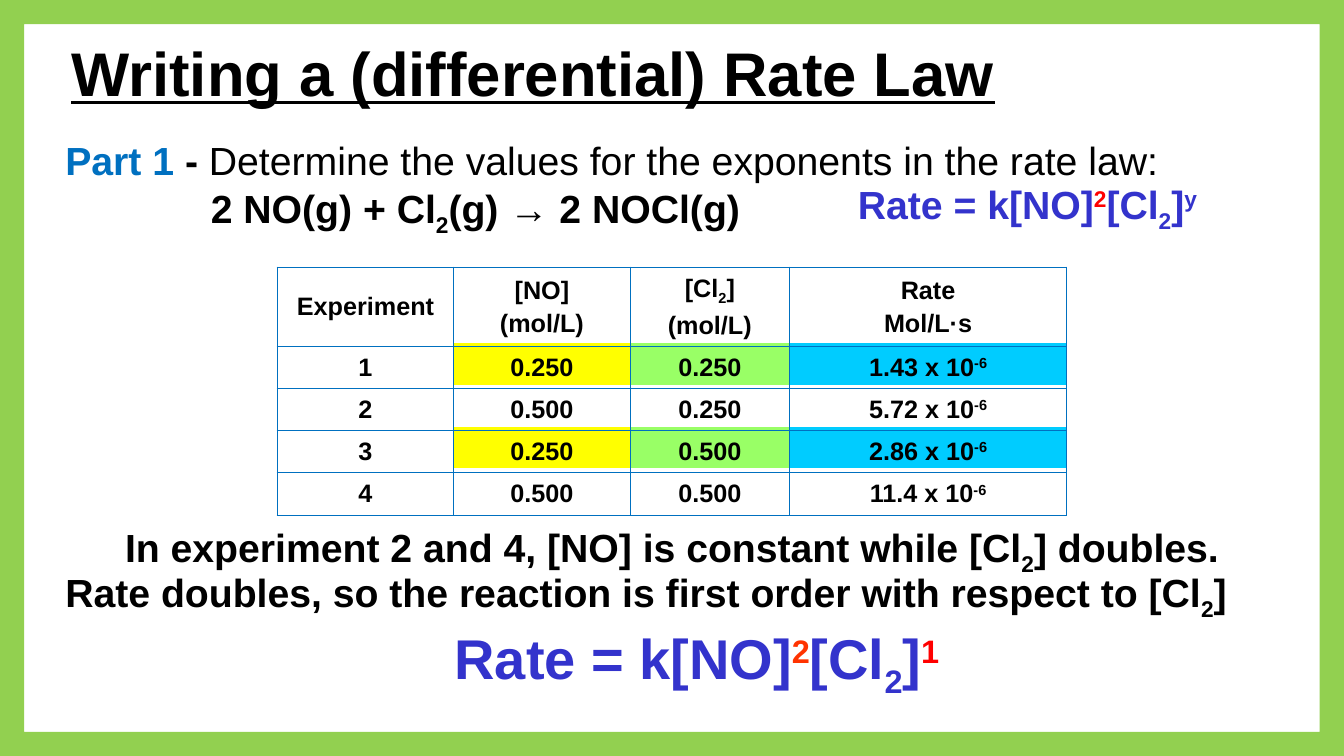
from itertools import accumulate

from lxml import etree
from pptx import Presentation
from pptx.dml.color import RGBColor
from pptx.enum.shapes import MSO_SHAPE
from pptx.enum.text import MSO_ANCHOR, MSO_AUTO_SIZE, PP_ALIGN
from pptx.oxml.ns import qn
from pptx.util import Inches, Pt

LEFT, CENTER = PP_ALIGN.LEFT, PP_ALIGN.CENTER
TOP, MIDDLE = MSO_ANCHOR.TOP, MSO_ANCHOR.MIDDLE
GROW = MSO_AUTO_SIZE.SHAPE_TO_FIT_TEXT
RECTANGLE, FRAME = MSO_SHAPE.RECTANGLE, MSO_SHAPE.FRAME

FONT = "Arial"
BLACK, WHITE = "000000", "FFFFFF"
BLUE, INDIGO = "0070C0", "3333CC"
RED, ORANGE_RED = "FF0000", "FF3300"
GREEN = "92D050"
SUB, SUPER = -25000, 30000

COLUMNS = [1.75, 1.75, 1.58, 2.75]
ROWS = [0.75, 0.41, 0.42, 0.42, 0.42]
HIGHLIGHT_COLORS = ["FFFF00", "99FF66", "00CCFF"]
HIGHLIGHT_TOPS = [0.75, 1.58]
CL2 = [("[Cl",), ("2", SUB), ("]",)]
HEADINGS = [
    [[("Experiment",)]],
    [[("[NO]",)], [("(mol/L)",)]],
    [CL2, [("(mol/L)",)]],
    [[("Rate",)], [("Mol/L·s",)]],
]
TRIALS = [
    ("1", "0.250", "0.250", "1.43"),
    ("2", "0.500", "0.250", "5.72"),
    ("3", "0.250", "0.500", "2.86"),
    ("4", "0.500", "0.500", "11.4"),
]


def rgb(hex_color):
    return RGBColor.from_string(hex_color)


def add_span(para, size, text, baseline=0, color=BLACK, bold=True, underline=False):
    span = para.add_run()
    span.text = text
    font = span.font
    font.name, font.size, font.bold = FONT, Pt(size), bold
    font.color.rgb = rgb(color)
    if underline:
        font.underline = True
    if baseline:
        span._r.get_or_add_rPr().set("baseline", str(baseline))


def add_text(page, box, size, spans, align=LEFT, anchor=TOP, wrap=True):
    """Place one paragraph of (text, baseline, color, ...) spans."""
    frame = page.shapes.add_textbox(*map(Inches, box)).text_frame
    frame.word_wrap = wrap
    frame.vertical_anchor = anchor
    if anchor == TOP:
        frame.auto_size = GROW
    para = frame.paragraphs[0]
    para.alignment = align
    for span in spans:
        add_span(para, size, *span)


def add_filled(page, kind, box, color, line=None):
    shape = page.shapes.add_shape(kind, *map(Inches, box))
    shape.shadow.inherit = False
    shape.fill.solid()
    shape.fill.fore_color.rgb = rgb(color)
    if line:
        shape.line.color.rgb = rgb(line)
        shape.line.width = Pt(0.75)
    else:
        shape.line.fill.background()
    return shape


def add_border(cell, color):
    properties = cell._tc.get_or_add_tcPr()
    for index, side in enumerate(("a:lnL", "a:lnR", "a:lnT", "a:lnB")):
        line = etree.Element(qn(side), w=str(Pt(1)))
        fill = etree.SubElement(line, qn("a:solidFill"))
        etree.SubElement(fill, qn("a:srgbClr"), val=color)
        properties.insert(index, line)


def fill_cell(cell, lines):
    cell.fill.background()
    cell.vertical_anchor = MIDDLE
    add_border(cell, BLUE)
    frame = cell.text_frame
    for index, spans in enumerate(lines):
        para = frame.add_paragraph() if index else frame.paragraphs[0]
        para.alignment = CENTER
        if index:
            para.space_before = Pt(3.6)
        for span in spans:
            add_span(para, 18, *span)


def add_highlights(page, left, top):
    """Colour bands behind the rows of experiments 1 and 3."""
    offsets = list(accumulate(COLUMNS))
    for row_top in HIGHLIGHT_TOPS:
        for offset, width, color in zip(offsets, COLUMNS[1:], HIGHLIGHT_COLORS):
            box = (left + offset, top + row_top, width, 0.42)
            add_filled(page, RECTANGLE, box, color, WHITE)


def add_experiments(page, left, top):
    add_highlights(page, left, top)
    box = (left, top, sum(COLUMNS), sum(ROWS))
    table = page.shapes.add_table(len(ROWS), len(COLUMNS), *map(Inches, box)).table
    table.first_row = table.horz_banding = False
    for column, width in zip(table.columns, COLUMNS):
        column.width = Inches(width)
    for row, height in zip(table.rows, ROWS):
        row.height = Inches(height)
    for column, lines in enumerate(HEADINGS):
        fill_cell(table.cell(0, column), lines)
    for row, (*values, rate) in enumerate(TRIALS, start=1):
        for column, value in enumerate(values):
            fill_cell(table.cell(row, column), [[(value,)]])
        fill_cell(table.cell(row, 3), [[(f"{rate} x 10",), ("-6", SUPER)]])


def add_rate_law(page, box, size, first, second):
    """Rate law with its two exponents given as (text, color)."""
    spans = [("Rate = k[NO]", 0, INDIGO), (first[0], SUPER, first[1]),
             ("[Cl", 0, INDIGO), ("2", SUB, INDIGO), ("]", 0, INDIGO),
             (second[0], SUPER, second[1])]
    add_text(page, box, size, spans, wrap=False)


def add_question(page, left, top):
    add_text(page, (left, top, 12.23, 4.34), 28, [
        ("Part 1 ", 0, BLUE), ("- ",),
        ("Determine the values for the exponents in the rate law:", 0, BLACK, False)])
    add_text(page, (left + 1.04, top + 0.48, 6.25, 0.57), 28,
             [("2 NO(g) + Cl",), ("2", SUB), ("(g) → 2 NOCl(g)",)], CENTER)
    add_rate_law(page, (left + 7.86, top + 0.44, 3.67, 0.57), 28,
                 ("2", RED), ("y", INDIGO))


def add_conclusion(page, left, top):
    add_text(page, (left, top, 12.23, 0.57), 28,
             [("In experiment 2 and 4, [NO] is constant while [Cl",),
              ("2", SUB), ("] doubles.",)], CENTER)
    add_text(page, (left, top + 0.45, 12.23, 0.57), 28,
             [("Rate doubles, so the reaction is first order with respect to [Cl",),
              ("2", SUB), ("]",)])
    add_rate_law(page, (left + 3.86, top + 1, 5.15, 0.77), 40,
                 ("2", ORANGE_RED), ("1", RED))


def main():
    deck = Presentation()
    deck.slide_width, deck.slide_height = Inches(13.33), Inches(7.5)
    page = deck.slides.add_slide(deck.slide_layouts[6])
    border = add_filled(page, FRAME, (0, 0, 13.33, 7.5), GREEN)
    border.adjustments[0] = 0.032
    add_text(page, (0.61, 0.23, 10.56, 0.96), 44,
             [("Writing a (differential) Rate Law", 0, BLACK, True, True)],
             anchor=MIDDLE)
    add_question(page, 0.55, 1.3)
    add_experiments(page, 2.75, 2.65)
    add_conclusion(page, 0.55, 5.14)
    deck.save("out.pptx")


if __name__ == "__main__":
    main()
